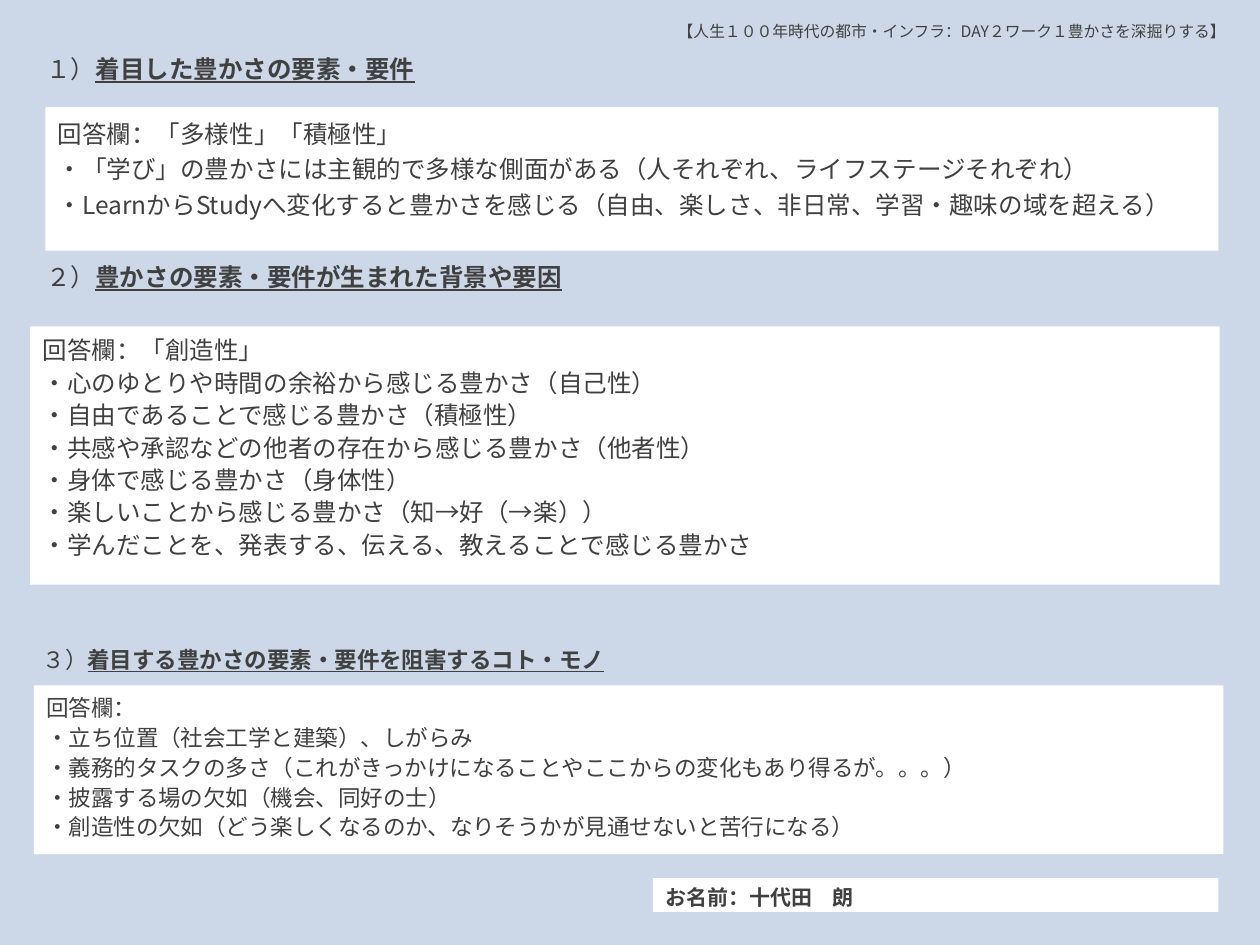
"""Build the worksheet slide on the elements of a rich life."""
from lxml.etree import SubElement
from pptx import Presentation
from pptx.dml.color import RGBColor
from pptx.enum.shapes import MSO_SHAPE
from pptx.enum.text import MSO_ANCHOR, PP_ALIGN
from pptx.oxml.ns import qn
from pptx.util import Pt

FONT = "Noto Sans CJK JP"
INK, PAPER, BACKGROUND = "404040", "FFFFFF", "CCD8E7"

HEADER = ("【人生１００年時代の都市・インフラ：DAY２ワーク１豊かさを深掘りする】", (380.2, 6.5, 347.8, 21.6))
NAME = ("お名前：十代田　朗", (373, 501.8, 323.3, 19.4))
SECTIONS = [
    {
        "number": "１）", "heading": "着目した豊かさの要素・要件",
        "heading_at": (19.4, 23.8, 231.1, 32.4),
        "answer_at": (25.9, 61.2, 670.3, 82.1), "size": 14, "spacing": 1.2,
        "answer": [
            "回答欄：「多様性」「積極性」",
            "・「学び」の豊かさには主観的で多様な側面がある（人それぞれ、ライフステージそれぞれ）",
            "・LearnからStudyへ変化すると豊かさを感じる（自由、楽しさ、非日常、学習・趣味の域を超える）",
        ],
    },
    {
        "number": "２）", "heading": "豊かさの要素・要件が生まれた背景や要因",
        "heading_at": (19.4, 142.6, 343.4, 32.4),
        "answer_at": (17.3, 186.5, 679.7, 147.6), "size": 14, "spacing": 1.1,
        "answer": [
            "回答欄：「創造性」",
            "・心のゆとりや時間の余裕から感じる豊かさ（自己性）",
            "・自由であることで感じる豊かさ（積極性）",
            "・共感や承認などの他者の存在から感じる豊かさ（他者性）",
            "・身体で感じる豊かさ（身体性）",
            "・楽しいことから感じる豊かさ（知→好（→楽））",
            "・学んだことを、発表する、伝える、教えることで感じる豊かさ",
        ],
    },
    {
        "number": "３）", "heading": "着目する豊かさの要素・要件を阻害するコト・モノ",
        "heading_at": (17.3, 362.2, 348.5, 32.4),
        "answer_at": (19.4, 391.7, 679.7, 96.5), "size": 12.9, "spacing": 1.1,
        "answer": [
            "回答欄：",
            "・立ち位置（社会工学と建築）、しがらみ",
            "・義務的タスクの多さ（これがきっかけになることやここからの変化もあり得るが。。。）",
            "・披露する場の欠如（機会、同好の士）",
            "・創造性の欠如（どう楽しくなるのか、なりそうかが見通せないと苦行になる）",
        ],
    },
]


def color(value):
    return RGBColor.from_string(value)


def style_paragraph(para, size, spacing, bold=None):
    para.alignment = PP_ALIGN.LEFT
    para.line_spacing = spacing
    font = para.font
    font.size, font.name, font.bold = Pt(size), FONT, bold
    font.color.rgb = color(INK)
    defaults = para._p.get_or_add_pPr().find(qn("a:defRPr"))
    SubElement(defaults, qn("a:ea")).set("typeface", FONT)


def add_label(slide, place, spans, size):
    frame = slide.shapes.add_textbox(*map(Pt, place)).text_frame
    frame.word_wrap = True
    para = frame.paragraphs[0]
    style_paragraph(para, size, 1.2)
    for text, emphasis in spans:
        span = para.add_run()
        span.text = text
        if emphasis:
            span.font.bold = span.font.underline = True


def add_panel(slide, place, lines, size, spacing, anchor=MSO_ANCHOR.TOP, bold=None):
    box = slide.shapes.add_shape(MSO_SHAPE.RECTANGLE, *map(Pt, place))
    box.shadow.inherit = False
    box.fill.solid()
    box.fill.fore_color.rgb = color(PAPER)
    box.line.fill.background()
    frame = box.text_frame
    frame.word_wrap = True
    frame.vertical_anchor = anchor
    frame.text = "\n".join(lines)
    for para in frame.paragraphs:
        style_paragraph(para, size, spacing, bold)


def main():
    deck = Presentation()
    deck.slide_width, deck.slide_height = Pt(720), Pt(540)
    slide = deck.slides.add_slide(deck.slide_layouts[6])
    slide.background.fill.solid()
    slide.background.fill.fore_color.rgb = color(BACKGROUND)

    for section in SECTIONS:
        size = section["size"]
        add_panel(slide, section["answer_at"], section["answer"], size, section["spacing"])
        spans = [(section["number"], False), (section["heading"], True)]
        add_label(slide, section["heading_at"], spans, size)

    name, name_at = NAME
    add_panel(slide, name_at, [name], 12, 1.2, MSO_ANCHOR.MIDDLE, True)
    header, header_at = HEADER
    add_label(slide, header_at, [(header, False)], 9)
    deck.save("out.pptx")


if __name__ == "__main__":
    main()
